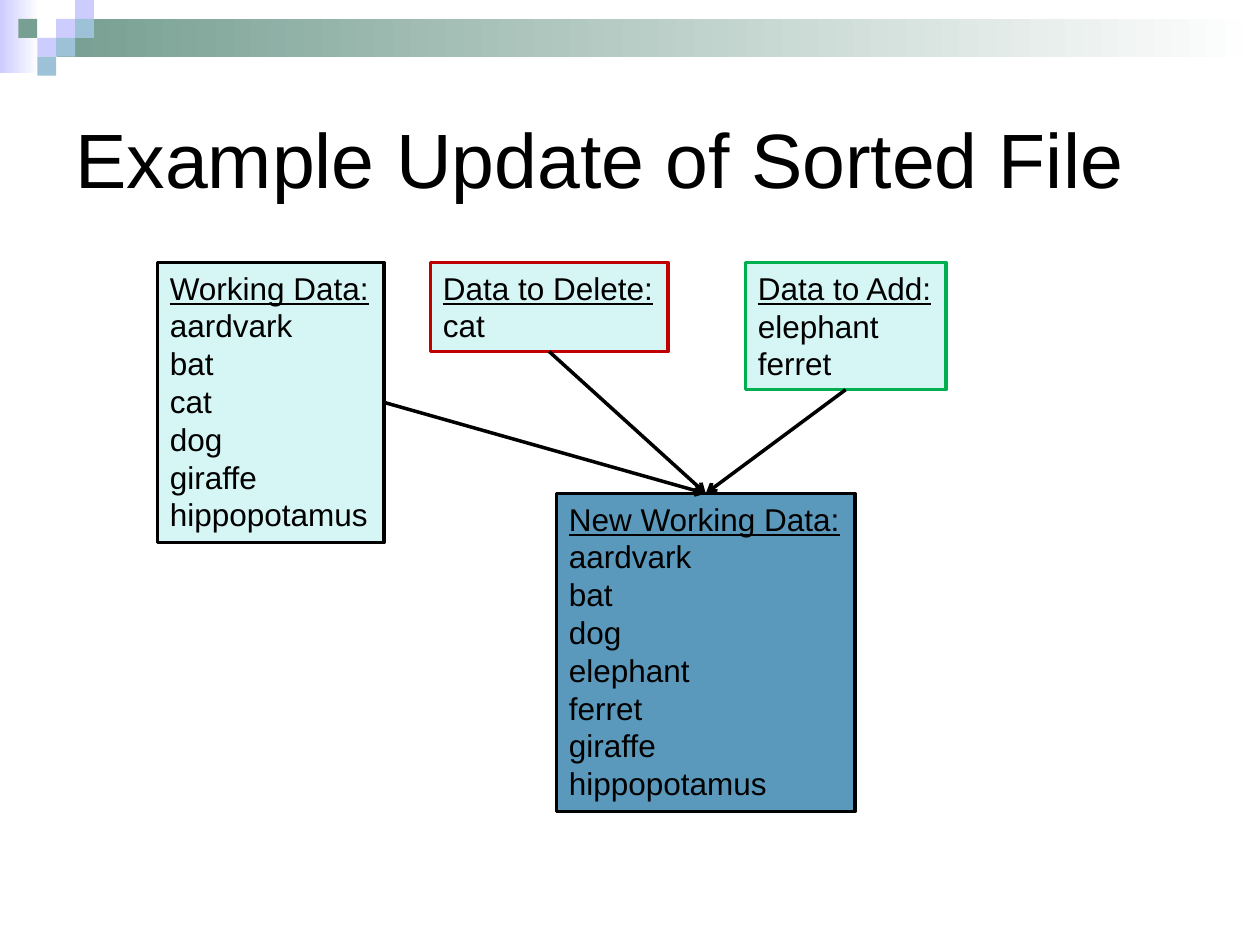
import pptx
import pptx.dml.color
import pptx.enum.shapes
import pptx.enum.text
import pptx.oxml
import pptx.util
from dataclasses import dataclass

Pt = pptx.util.Pt
RGB = pptx.dml.color.RGBColor.from_string


@dataclass(frozen=True)
class Theme:
    font: str = "Arial"
    title_size: int = 44
    body_size: int = 18
    line_width: int = 2
    ink: str = "000000"
    white: str = "FFFFFF"
    lavender: str = "CCCCFF"
    sage: str = "779F92"
    sky: str = "9DC2D7"
    pale: str = "D6F5F5"
    blue: str = "5B99BC"
    red: str = "C00000"
    green: str = "00B050"


theme = Theme()
presentation = pptx.Presentation()
presentation.slide_width = Pt(720)
presentation.slide_height = Pt(540)
slide = presentation.slides.add_slide(presentation.slide_layouts[6])


def add_rectangle(left, top, width, height, color):
    shape = slide.shapes.add_shape(
        pptx.enum.shapes.MSO_SHAPE.RECTANGLE, Pt(left), Pt(top), Pt(width), Pt(height)
    )
    shape.shadow.inherit = False
    shape.fill.solid()
    shape.fill.fore_color.rgb = RGB(color)
    shape.line.fill.background()
    return shape


def add_text(paragraph, text, size, underline=False):
    paragraph.alignment = pptx.enum.text.PP_ALIGN.LEFT
    run = paragraph.add_run()
    run.text = text
    run.font.name = theme.font
    run.font.size = Pt(size)
    run.font.color.rgb = RGB(theme.ink)
    run.font.underline = underline


bands = [
    (0, 0, 22.3, 41.8, theme.lavender),
    (32.4, 10.8, 687.6, 21.6, theme.sage),
]
for band in bands:
    shape = add_rectangle(*band)
    shape.fill.gradient()
    shape.fill.gradient_angle = 0
    for stop, color in zip(shape.fill.gradient_stops, (band[-1], theme.white)):
        stop.color.rgb = RGB(color)

tile = 10.8
tiles = [
    (3, 1, theme.lavender),
    (4, 0, theme.lavender),
    (4, 1, theme.sky),
    (2, 2, theme.lavender),
    (1, 1, theme.sage),
    (3, 2, theme.sky),
    (2, 3, theme.sky),
]
for column, row, color in tiles:
    add_rectangle(column * tile - 0.3, row * tile, tile, tile, color)

title = slide.shapes.add_textbox(Pt(36), Pt(36), Pt(648), Pt(108))
title.text_frame.word_wrap = True
title.text_frame.vertical_anchor = pptx.enum.text.MSO_ANCHOR.MIDDLE
add_text(title.text_frame.paragraphs[0], "Example Update of Sorted File", theme.title_size)

boxes = [
    (90, 150, 129.6, 160, theme.pale, theme.ink, "Working Data:",
     ["aardvark", "bat", "cat", "dog", "giraffe", "hippopotamus"]),
    (246, 150, 135.7, 50.9, theme.pale, theme.red, "Data to Delete:", ["cat"]),
    (426, 150, 114.5, 72.7, theme.pale, theme.green, "Data to Add:",
     ["elephant", "ferret"]),
    (318, 282, 170.6, 181.7, theme.blue, theme.ink, "New Working Data:",
     ["aardvark", "bat", "dog", "elephant", "ferret", "giraffe", "hippopotamus"]),
]
data_shapes = []
for left, top, width, height, fill, outline, heading, entries in boxes:
    shape = add_rectangle(left, top, width, height, fill)
    shape.line.color.rgb = RGB(outline)
    shape.line.width = Pt(theme.line_width)
    frame = shape.text_frame
    frame.word_wrap = False
    frame.auto_size = pptx.enum.text.MSO_AUTO_SIZE.SHAPE_TO_FIT_TEXT
    frame.vertical_anchor = pptx.enum.text.MSO_ANCHOR.TOP
    add_text(frame.paragraphs[0], heading, theme.body_size, underline=True)
    for entry in entries:
        add_text(frame.add_paragraph(), entry, theme.body_size)
    data_shapes.append(shape)

working, deletions, additions, new_working = data_shapes
for source, side in [(working, 3), (additions, 2), (deletions, 2)]:
    connector = slide.shapes.add_connector(
        pptx.enum.shapes.MSO_CONNECTOR.STRAIGHT, Pt(0), Pt(0), Pt(0), Pt(0)
    )
    connector.begin_connect(source, side)
    connector.end_connect(new_working, 0)
    connector.line.color.rgb = RGB(theme.ink)
    connector.line.width = Pt(theme.line_width)
    namespace = pptx.oxml.ns.nsdecls("a")
    line = connector.line._get_or_add_ln()
    line.append(pptx.oxml.parse_xml(f'<a:tailEnd {namespace} type="arrow"/>'))
    connector._element.spPr.append(pptx.oxml.parse_xml(f"<a:effectLst {namespace}/>"))

presentation.save("out.pptx")
